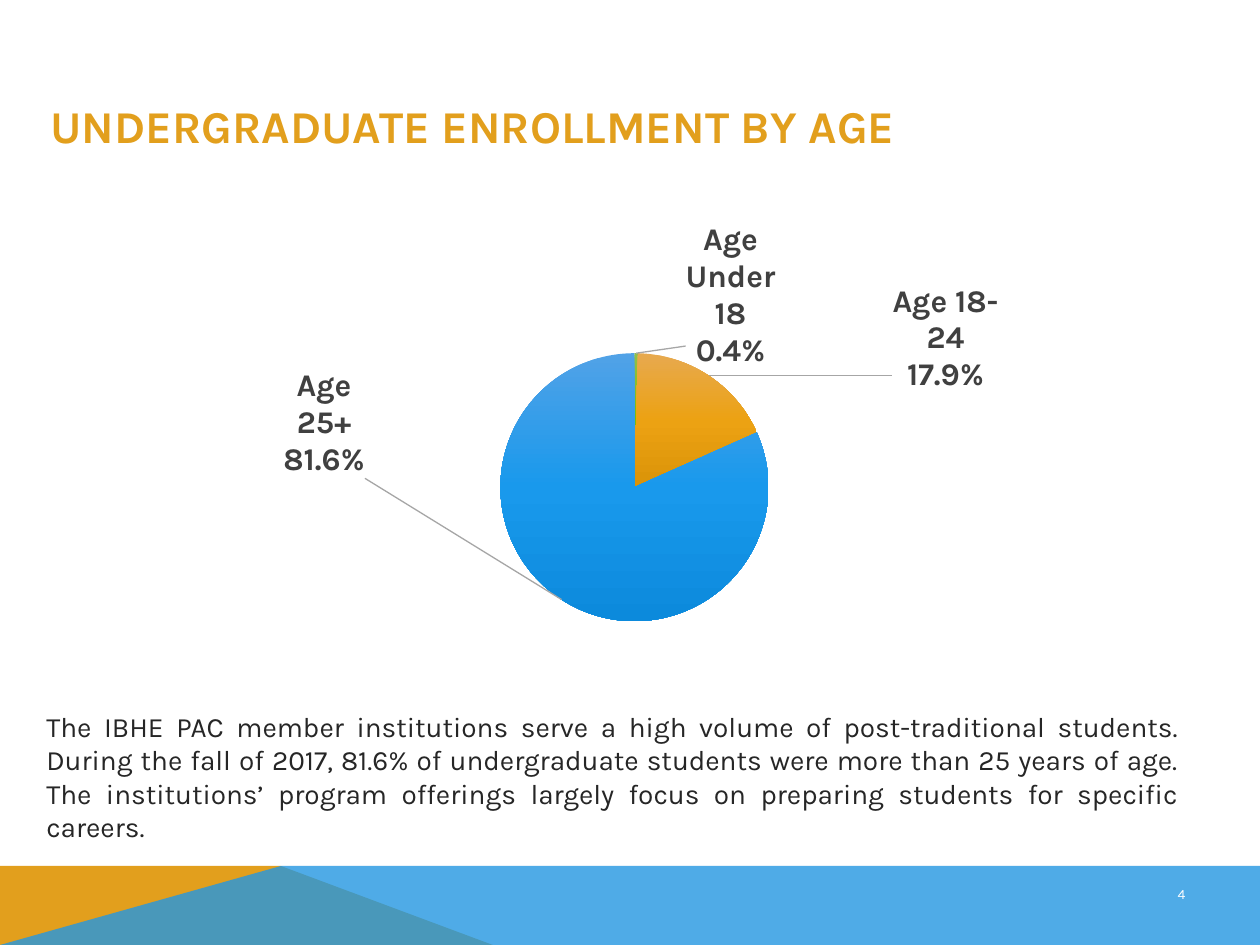
from pptx import Presentation
from pptx.chart.data import CategoryChartData as ChartData
from pptx.dml.color import RGBColor as RGB
from pptx.enum.chart import XL_CHART_TYPE as Kind, XL_LABEL_POSITION as Spot
from pptx.enum.text import MSO_ANCHOR as Anchor, PP_ALIGN as Align
from pptx.oxml import parse_xml
from pptx.oxml.ns import nsdecls
from pptx.util import Pt

PX = 914400 / 126  # EMU in one px
NS = nsdecls("c", "a")


class Theme:
    font = "Karla"
    gold, blue, white = "E29F1D", "2397E2", "FFFFFF"
    body, label, lead = "262626", "404040", "A6A6A6"
    title_pt, body_pt, label_pt, page_pt = 26, 16, 18, 8


# name, value, gradient from top to bottom, label shift as a share of the chart
AGES = [
    ("Age Under 18", 0.4, ("8FC14B", "82BC00", "74A700"), (0.08, -0.27)),
    ("Age 18-24", 17.9, ("E7A94F", "ECA213", "DA9308"), (0.23, -0.17)),
    ("Age 25+", 81.6, ("51A2E7", "1999EC", "0C8ADC"), (-0.23, -0.22)),
]


def emu(*vals):
    return [round(v * PX) for v in vals]


def style(font, size, color, bold=False):
    font.name, font.size, font.bold = Theme.font, Pt(size), bold
    font.color.rgb = RGB.from_string(color)


def text(slide, box, words, size, color, bold=False, align=Align.LEFT,
         anchor=Anchor.TOP):
    frame = slide.shapes.add_textbox(*emu(*box)).text_frame
    frame.word_wrap = True
    frame.vertical_anchor = anchor
    para = frame.paragraphs[0]
    para.alignment = align
    run = para.add_run()
    run.text = words
    style(run.font, size, color, bold)


def band(slide, box, spots, color, alpha=100):
    x, y, w, h = box
    pts = [(x + px, y + py) for px, py in spots]
    pen = slide.shapes.build_freeform(*pts[0], scale=PX)
    pen.add_line_segments(pts[1:], close=True)
    shape = pen.convert_to_shape()
    shape.shadow.inherit = False
    shape.line.fill.background()
    shape.fill.solid()
    shape.fill.fore_color.rgb = RGB.from_string(color)
    if alpha < 100:
        tone = shape.fill._xPr.find(".//{*}srgbClr")
        tone.append(parse_xml(f'<a:alpha {NS} val="{alpha * 1000}"/>'))


def footer(slide, box):
    x, y, w, h = box
    peak = 281
    band(slide, box, [(0, h), (0, 0), (peak, 0), (493, h)], Theme.gold)
    band(slide, box, [(0, h), (peak, 0), (w, 0), (w, h)], Theme.blue, 80)
    # Page number
    text(slide, (x + 1148, y + 13, 67, 60), "4", Theme.page_pt, Theme.white,
         align=Align.CENTER)


def shade(point, tones):
    point.format.fill.gradient()
    point.format.fill.gradient_angle = 270
    stops = point.format.fill._xPr.find(".//{*}gsLst")
    for stop in list(stops):
        stops.remove(stop)
    for pos, tone in zip((0, 50000, 100000), tones):
        stops.append(parse_xml(
            f'<a:gs {NS} pos="{pos}"><a:srgbClr val="{tone}"/></a:gs>'))


def place(node, shift):
    """Move one point label and give it a name line and a value line."""
    dx, dy = shift
    old = node.find("{*}layout")
    if old is not None:
        node.remove(old)
    idx = node.find("{*}idx")
    idx.addnext(parse_xml(
        f'<c:numFmt {NS} formatCode="0.0&quot;%&quot;" sourceLinked="0"/>'))
    idx.addnext(parse_xml(
        f'<c:layout {NS}><c:manualLayout><c:x val="{dx}"/><c:y val="{dy}"/>'
        '</c:manualLayout></c:layout>'))
    node.find("{*}showCatName").set("val", "1")
    node.append(parse_xml(f'<c:separator {NS}>\n</c:separator>'))


def pie(slide, box):
    data = ChartData()
    data.categories = [age[0] for age in AGES]
    data.add_series("Series 1", [age[1] for age in AGES])
    chart = slide.shapes.add_chart(Kind.PIE, *emu(*box), data).chart
    chart.has_title = chart.has_legend = False
    chart.font.name, chart.font.size = Theme.font, Pt(10)
    plot = chart.plots[0]
    plot.vary_by_categories = True
    ser = plot.series[0]

    # Slices and their labels
    for i, (name, val, tones, shift) in enumerate(AGES):
        point = ser.points[i]
        shade(point, tones)
        label = point.data_label
        style(label.font, Theme.label_pt, Theme.label, True)
        label.position = Spot.CENTER
        place(ser._element.xpath("c:dLbls/c:dLbl")[i], shift)

    # Leader lines
    labels = ser.data_labels
    labels.show_category_name = labels.show_value = True
    node = labels._element
    for old in node.xpath("c:showLeaderLines | c:leaderLines"):
        node.remove(old)
    node.append(parse_xml(f'<c:showLeaderLines {NS} val="1"/>'))
    node.append(parse_xml(
        f'<c:leaderLines {NS}><c:spPr><a:ln w="9525"><a:solidFill>'
        f'<a:srgbClr val="{Theme.lead}"/></a:solidFill></a:ln></c:spPr>'
        '</c:leaderLines>'))

    # Plot area
    area = plot._element.getparent()
    for old in area.findall("{*}layout"):
        area.remove(old)
    spots = zip("xywh", (0.2, 0.24, 0.6, 0.49))
    sides = "".join(f'<c:{k} val="{v}"/>' for k, v in spots)
    area.insert(0, parse_xml(
        f'<c:layout {NS}><c:manualLayout><c:layoutTarget val="inner"/>'
        '<c:xMode val="edge"/><c:yMode val="edge"/>'
        f'{sides}</c:manualLayout></c:layout>'))


def main():
    deck = Presentation()
    deck.slide_width, deck.slide_height = emu(1260, 945)
    slide = deck.slides.add_slide(deck.slide_layouts[6])
    footer(slide, (0, 866, 1260, 79))
    text(slide, (34, 703, 1157, 116),
         "The IBHE PAC member institutions serve a high volume of "
         "post-traditional students. During the fall of 2017, 81.6% of "
         "undergraduate students were more than 25 years of age. The "
         "institutions’ program offerings largely focus on preparing "
         "students for specific careers.",
         Theme.body_pt, Theme.body, align=Align.JUSTIFY)
    pie(slide, (39, 222, 1191, 547))
    text(slide, (38, 87, 1154, 76), "UNDERGRADUATE ENROLLMENT BY AGE",
         Theme.title_pt, Theme.gold, True, anchor=Anchor.MIDDLE)
    deck.save("out.pptx")


if __name__ == "__main__":
    main()
